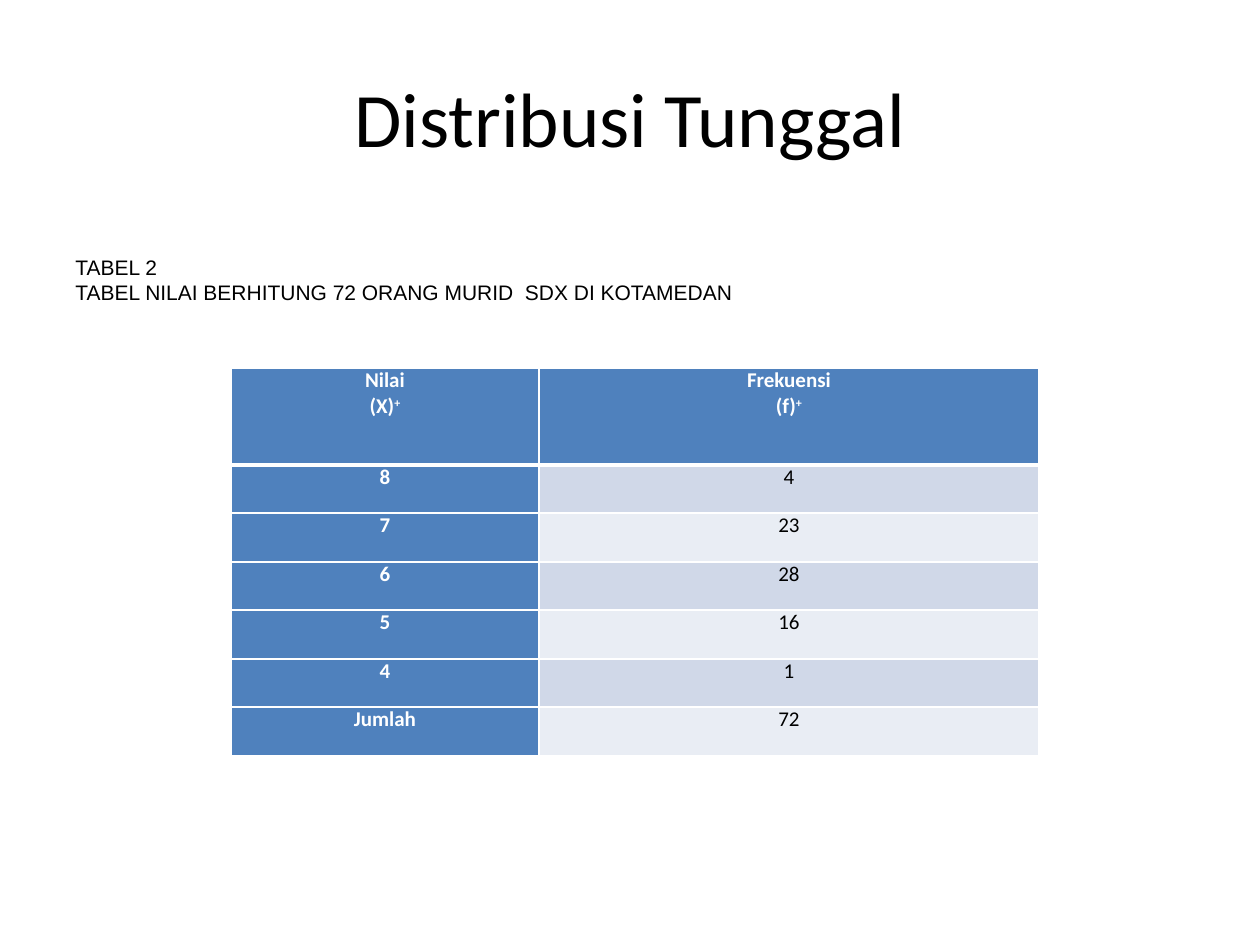
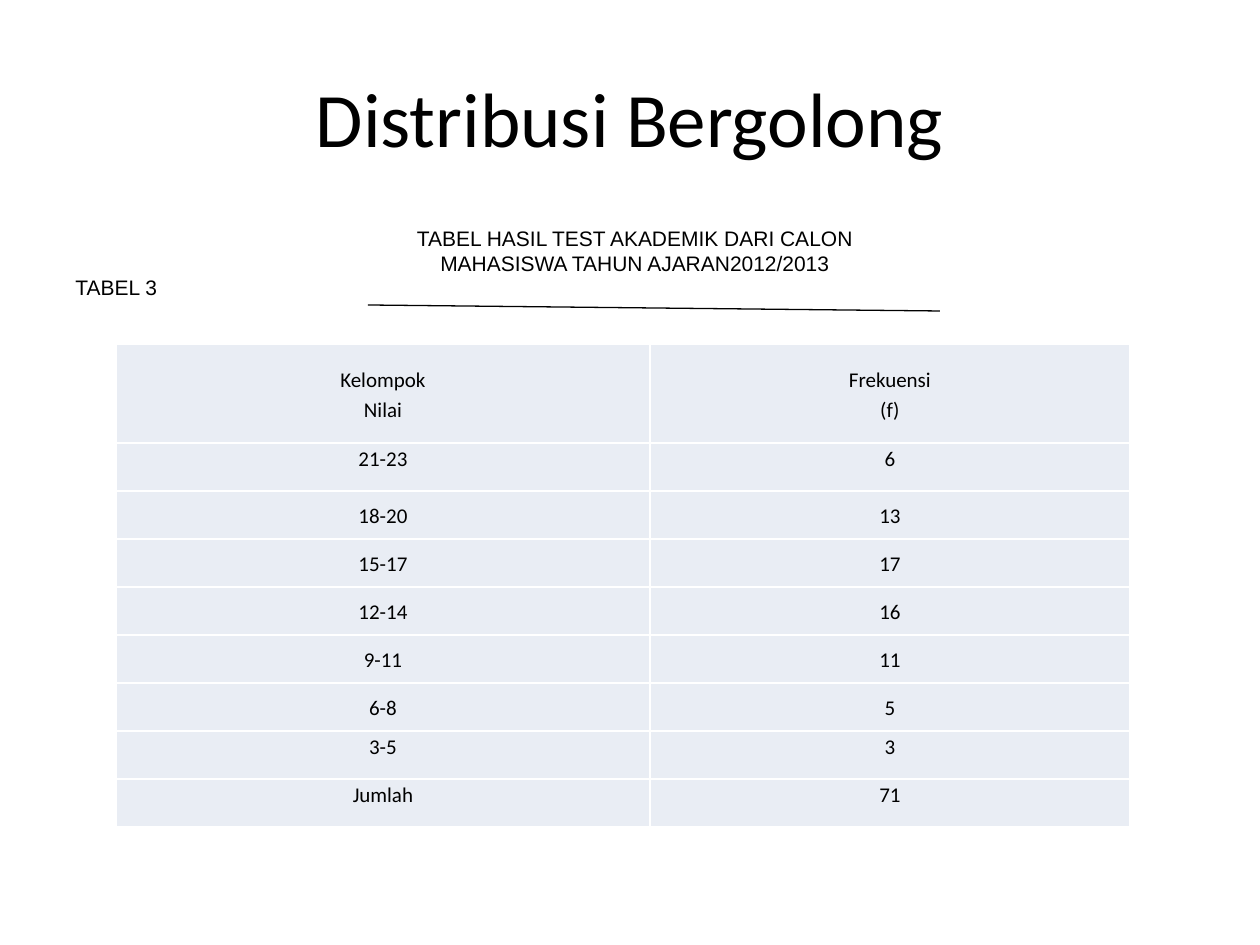
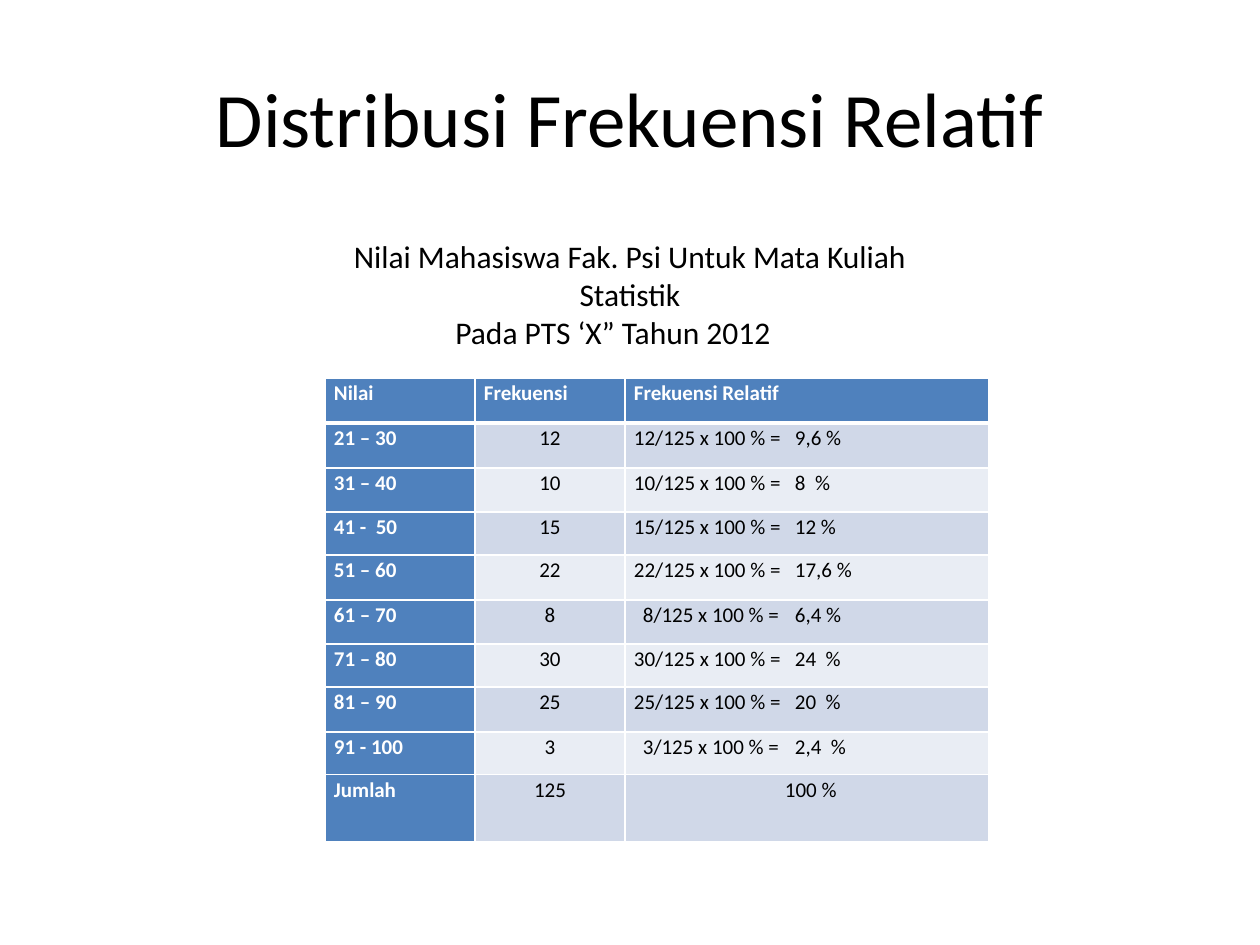
from pptx import Presentation
from pptx.dml.color import RGBColor as RGB
from pptx.enum.shapes import MSO_CONNECTOR as Conn
from pptx.enum.text import MSO_ANCHOR as Anchor, PP_ALIGN as Align
from pptx.oxml.ns import qn
from pptx.util import Pt
from lxml.etree import SubElement as Sub

# Shared look
UNIT = 914400 / 126
HUES = {"ink": "000000", "white": "FFFFFF", "head": "4F81BD",
        "band": "D0D8E8", "pale": "E9EDF4"}
LEFT, MID = Align.LEFT, Align.CENTER


def px(n):
    return round(n * UNIT)


def hue(name):
    return RGB.from_string(HUES[name])


# Text
def write(frame, lines, size, face="Calibri", color="ink", bold=False,
          align=LEFT, space=None, stops=()):
    """Fill a frame; text after ^ in a line is raised."""
    for i, line in enumerate(lines):
        par = frame.paragraphs[0] if i == 0 else frame.add_paragraph()
        base, _, power = line.partition("^")
        par.text = base
        if power:
            run = par.add_run()
            run.text = power
            run._r.get_or_add_rPr().set("baseline", "30000")
        if stops:
            tabs = Sub(par._p.get_or_add_pPr(), qn("a:tabLst"))
            for stop in stops:
                Sub(tabs, qn("a:tab"), pos=str(px(stop)), algn="l")
        par.alignment = align
        if space:
            par.line_spacing = space
        font = par.font
        font.size, font.name, font.bold = Pt(size), face, bold
        font.color.rgb = hue(color)


def label(slide, box, lines, size, anchor=Anchor.TOP, **look):
    frame = slide.shapes.add_textbox(*map(px, box)).text_frame
    frame.word_wrap = True
    frame.vertical_anchor = anchor
    write(frame, lines, size, **look)
    return frame


def start(deck, title):
    slide = deck.slides.add_slide(deck.slide_layouts[6])
    label(slide, (63, 38, 1134, 157), [title], 44, Anchor.MIDDLE, align=MID)
    return slide


# Lines
def rule(slide, x1, y1, x2, y2):
    line = slide.shapes.add_connector(Conn.STRAIGHT, *map(px, (x1, y1, x2, y2)))
    line.line.color.rgb = hue("ink")
    line.line.width = Pt(0.75)
    Sub(line._element.spPr, qn("a:effectLst"))


# Tables
def edge(cell, top, base):
    props = cell._tc.get_or_add_tcPr()
    for side, width in (("L", 1), ("R", 1), ("T", top), ("B", base)):
        line = Sub(props, qn("a:ln" + side), w=str(Pt(width)))
        fill = Sub(line, qn("a:solidFill"))
        Sub(fill, qn("a:srgbClr"), val=HUES["white"])


def grid(slide, x, y, wide, high, rows, aligns, strong=True, pad=9,
         space=None, stops=(), middle=()):
    """Strong tables have a dark first row and column and banded rows."""
    box = map(px, (x, y, sum(wide), sum(high)))
    table = slide.shapes.add_table(len(rows), len(wide), *box).table
    table.first_row = table.first_col = table.horz_banding = strong
    for col, width in zip(table.columns, wide):
        col.width = px(width)
    for r, (row, height) in enumerate(zip(rows, high)):
        table.rows[r].height = px(height)
        for c, text in enumerate(row):
            cell = table.cell(r, c)
            dark = strong and 0 in (r, c)
            fill = "head" if dark else "band" if strong and r % 2 else "pale"
            edge(cell, 3 if strong and r == 1 else 1,
                 3 if strong and r == 0 else 1)
            cell.fill.solid()
            cell.fill.fore_color.rgb = hue(fill)
            cell.margin_left = cell.margin_right = px(pad)
            cell.margin_top = cell.margin_bottom = 0
            cell.vertical_anchor = Anchor.MIDDLE if r in middle else Anchor.TOP
            write(cell.text_frame, text.split("\n"), 12, bold=dark,
                  color="white" if dark else "ink", space=space,
                  align=aligns[c] if r else aligns[0], stops=stops)
    return table


# Slides
def single(deck):
    slide = start(deck, "Distribusi Tunggal")
    rows = [("Nilai\n(X)^+", "Frekuensi\n(f)^+"), ("8", "4"), ("7", "23"),
            ("6", "28"), ("5", "16"), ("4", "1"), ("Jumlah", "72")]
    grid(slide, 231, 368, (308, 500), [97] + [48, 49] * 3, rows, (MID, MID))
    label(slide, (63, 248, 1197, 102),
          ["TABEL 2", "TABEL NILAI BERHITUNG 72 ORANG MURID  SDX DI KOTAMEDAN"],
          12, face="Arial")


def grouped(deck):
    slide = start(deck, "Distribusi Bergolong")
    rows = [("Kelompok\nNilai", "Frekuensi\n(f)"), ("21-23", "6"),
            ("18-20", "13"), ("15-17", "17"), ("12-14", "16"), ("9-11", "11"),
            ("6-8", "5"), ("3-5", "3"), ("Jumlah", "71")]
    grid(slide, 116, 344, (534, 480), [99] + [48] * 8, rows, (MID, MID),
         strong=False, pad=0, space=1.15, middle=(0, 2, 3, 4, 5, 6))
    label(slide, (63, 268, 1113, 76), ["TABEL 3"], 12, face="Arial")
    rule(slide, 368, 305, 940, 311)
    label(slide, (63, 219, 1144, 63),
          ["TABEL HASIL TEST AKADEMIK DARI CALON\vMAHASISWA TAHUN AJARAN2012/2013"],
          12, face="Arial", align=MID)


def relative(deck):
    slide = start(deck, "Distribusi Frekuensi Relatif")
    rows = [("Nilai", "Frekuensi", "Frekuensi Relatif"),
            ("21 – 30", "12", "12/125 x 100 % =\t9,6 %"),
            ("31 – 40", "10", "10/125 x 100 % =\t8  %"),
            ("41 -  50", "15", "15/125 x 100 % =\t12 %"),
            ("51 – 60", "22", "22/125 x 100 % =\t17,6 %"),
            ("61 – 70", "8", "\t8/125 x 100 % =\t6,4 %"),
            ("71 – 80", "30", "30/125 x 100 % =\t24  %"),
            ("81 – 90", "25", "25/125 x 100 % =\t20  %"),
            ("91 - 100", "3", "\t3/125 x 100 % =\t2,4  %"),
            ("Jumlah", "125", "100 %")]
    high = (45, 45, 44, 43, 45, 44, 43, 45, 43, 67)
    table = grid(slide, 325, 378, (150, 150, 364), high, rows,
                 (LEFT, MID, LEFT), space=1.1, stops=(9, 161))
    table.cell(len(rows) - 1, 2).margin_left = px(160)
    frame = label(slide, (315, 231, 630, 127),
                  ["Nilai Mahasiswa Fak. Psi Untuk Mata Kuliah Statistik",
                   "Pada PTS ‘X” Tahun 2012"], 18, align=MID)
    last = frame.paragraphs[1]
    last.alignment = LEFT
    props = last._p.get_or_add_pPr()
    props.set("marL", str(px(128)))
    props.set("indent", "0")


def main():
    deck = Presentation()
    deck.slide_width, deck.slide_height = px(1260), px(945)
    for build in (single, grouped, relative):
        build(deck)
    deck.save("out.pptx")


if __name__ == "__main__":
    main()
